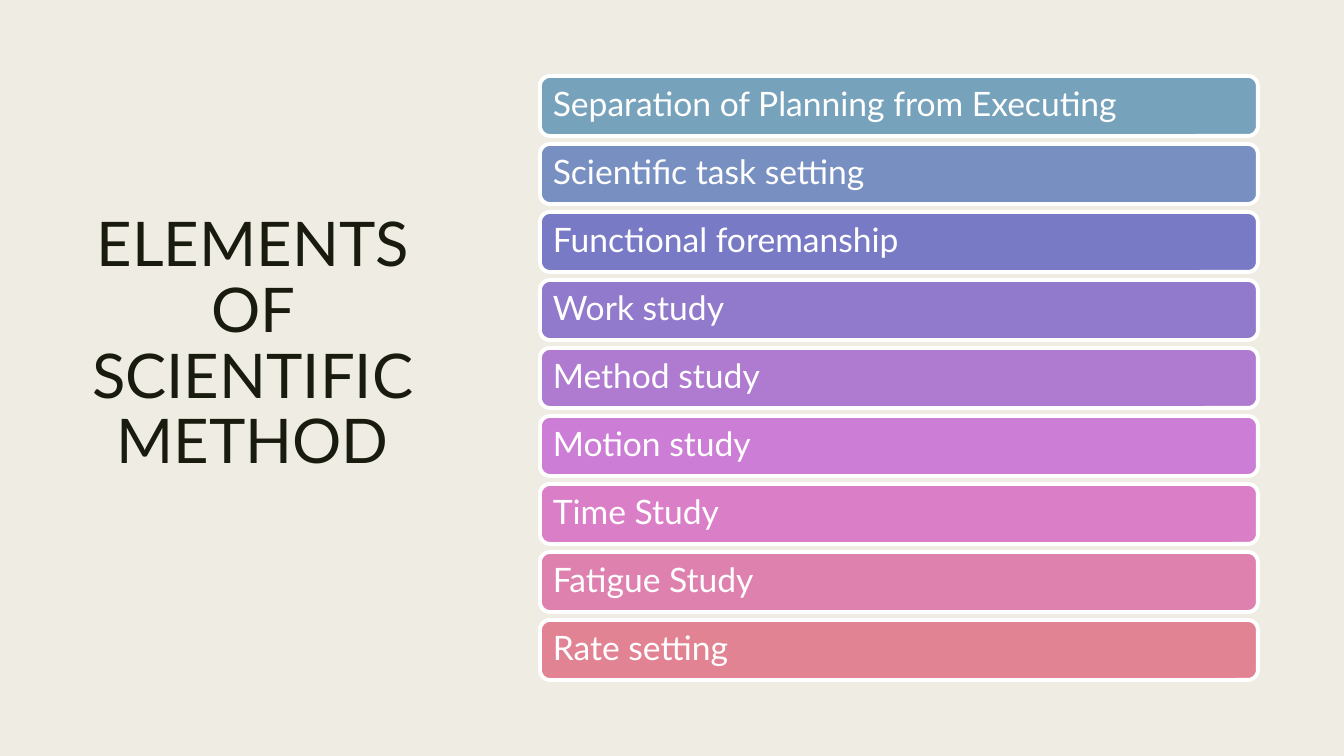
from typing import Any, NamedTuple

from pptx import Presentation
from pptx.dml.color import RGBColor
from pptx.enum.shapes import MSO_SHAPE
from pptx.enum.text import MSO_ANCHOR, MSO_AUTO_SIZE, PP_ALIGN
from pptx.util import Emu, Pt

ROUND = MSO_SHAPE.ROUNDED_RECTANGLE
MIDDLE = MSO_ANCHOR.MIDDLE
NO_FIT = MSO_AUTO_SIZE.NONE
LEFT, CENTER = PP_ALIGN.LEFT, PP_ALIGN.CENTER

WIDE, HIGH = 1344, 756
SCALE = 12192000 / WIDE

CREAM = RGBColor(0xEF, 0xED, 0xE3)
INK = RGBColor(0x19, 0x1B, 0x0E)
WHITE = RGBColor(0xFF, 0xFF, 0xFF)

BAR_LEFT, BAR_TOP, BAR_WIDE, BAR_HIGH, BAR_STEP = 540, 76, 718, 60, 68


class Bar(NamedTuple):
    label: str
    fill: RGBColor


BARS = [
    Bar("Separation of Planning from Executing", RGBColor(0x77, 0xA2, 0xBB)),
    Bar("Scientific task setting", RGBColor(0x78, 0x8F, 0xC1)),
    Bar("Functional foremanship", RGBColor(0x79, 0x7A, 0xC6)),
    Bar("Work study", RGBColor(0x91, 0x7A, 0xCB)),
    Bar("Method study", RGBColor(0xAE, 0x7B, 0xD0)),
    Bar("Motion study", RGBColor(0xCC, 0x7D, 0xD5)),
    Bar("Time Study", RGBColor(0xDA, 0x7F, 0xC7)),
    Bar("Fatigue Study", RGBColor(0xDE, 0x81, 0xAE)),
    Bar("Rate setting", RGBColor(0xE2, 0x83, 0x94)),
]


def px(count: int) -> Emu:
    return Emu(round(count * SCALE))


def apply(target: Any, values: dict[str, Any]) -> None:
    """Set each named attribute of the target."""
    for name, value in values.items():
        setattr(target, name, value)


def write(shape: Any, text: str, frame: dict[str, Any],
          para: dict[str, Any], font: dict[str, Any], color: RGBColor) -> None:
    box = shape.text_frame
    box.text = text
    apply(box, {"word_wrap": True, "auto_size": NO_FIT,
                "vertical_anchor": MIDDLE} | frame)
    line = box.paragraphs[0]
    apply(line, para)
    face = line.runs[0].font
    apply(face, {"name": "Lato"} | font)
    face.color.rgb = color


def add_title(slide: Any) -> None:
    title = slide.shapes.title
    apply(title, {"left": px(71), "top": px(71),
                  "width": px(364), "height": px(615)})
    # The deep bottom margin lifts the title above the middle.
    frame = {"margin_left": px(10), "margin_right": px(10),
             "margin_top": px(5), "margin_bottom": px(71)}
    write(title, "ELEMENTS OF SCIENTIFIC METHOD", frame,
          {"alignment": CENTER, "line_spacing": 0.89},
          {"size": Pt(44)}, INK)


def add_bar(slide: Any, bar: Bar, row: int) -> None:
    shape = slide.shapes.add_shape(
        ROUND, px(BAR_LEFT), px(BAR_TOP + row * BAR_STEP),
        px(BAR_WIDE), px(BAR_HIGH))
    shape.shadow.inherit = False
    shape.fill.solid()
    shape.fill.fore_color.rgb = bar.fill
    shape.line.color.rgb = WHITE
    shape.line.width = Pt(2.75)
    sides = ("left", "right", "top", "bottom")
    write(shape, bar.label, {f"margin_{side}": px(10) for side in sides},
          {"alignment": LEFT, "line_spacing": 0.9},
          {"size": Pt(24)}, WHITE)


def main() -> None:
    deck = Presentation()
    apply(deck, {"slide_width": px(WIDE), "slide_height": px(HIGH)})
    slide = deck.slides.add_slide(deck.slide_layouts.get_by_name("Title Only"))
    back = slide.background.fill
    back.solid()
    back.fore_color.rgb = CREAM
    add_title(slide)
    for row, bar in enumerate(BARS):
        add_bar(slide, bar, row)
    deck.save("out.pptx")


if __name__ == "__main__":
    main()
